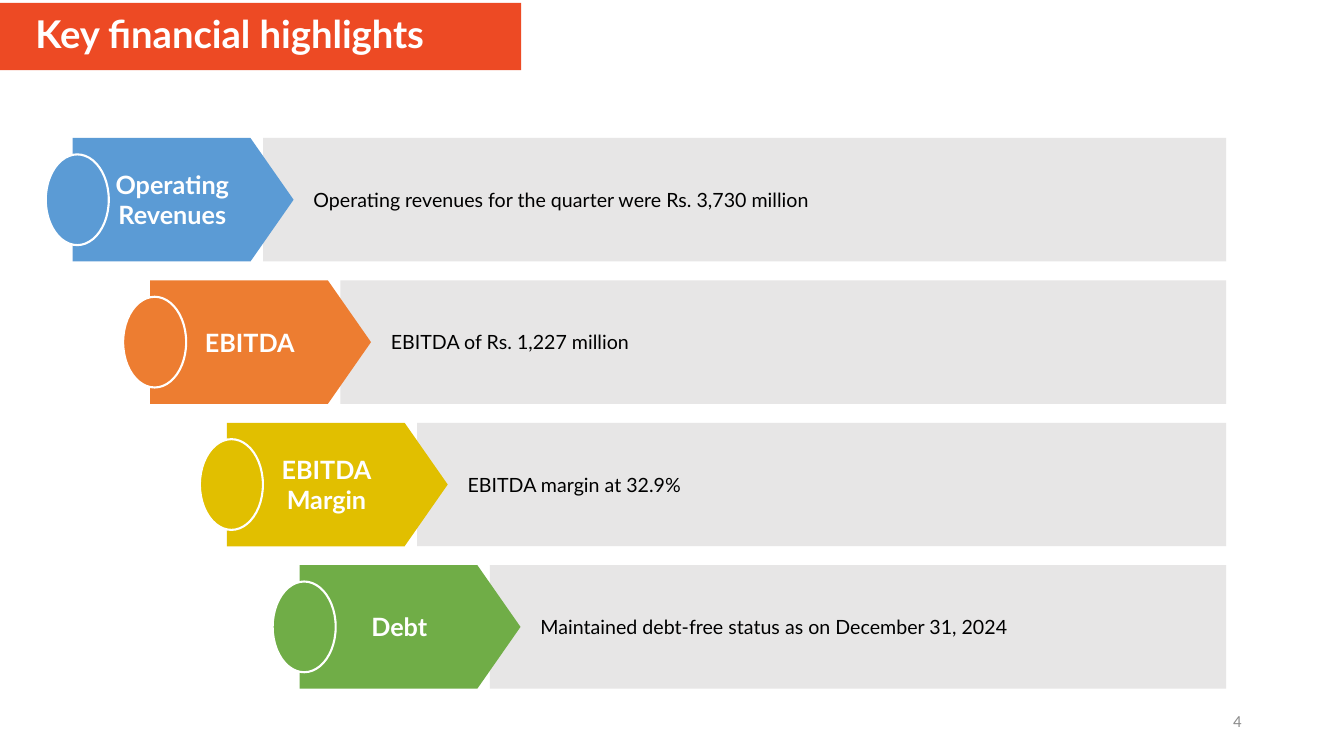
"""Build the key financial highlights slide with four stepped arrow rows."""
from pptx import Presentation
from pptx.dml.color import RGBColor
from pptx.enum.shapes import MSO_SHAPE
from pptx.enum.text import MSO_ANCHOR, MSO_AUTO_SIZE, PP_ALIGN
from pptx.util import Pt

TITLE = "Key financial highlights"
PAGE_NUMBER = "4"
ROWS = [
    ("Operating Revenues", "Operating revenues for the quarter were Rs. 3,730 million", "blue", 51.9),
    ("EBITDA", "EBITDA of Rs. 1,227 million", "orange", 107.2),
    ("EBITDA\vMargin", "EBITDA margin at 32.9%", "yellow", 162),
    ("Debt", "Maintained debt-free status as on December 31, 2024", "green", 214),
]
COLORS = {
    "title": "ED4A24", "bar": "E7E6E6", "blue": "5B9BD5", "orange": "ED7D31",
    "yellow": "E1BF00", "green": "70AD47", "white": "FFFFFF", "black": "000000",
    "number": "8C8C8C",
}
FIRST_TOP, ROW_STEP, ROW_HEIGHT = 98.6, 101.7, 88.2
ARROW_WIDTH, BAR_OFFSET, BAR_RIGHT = 157.8, 136, 875.8
CIRCLE_WIDTH, CIRCLE_HEIGHT, CIRCLE_OVERHANG = 45, 64.8, 19.2


def color(name):
    return RGBColor.from_string(COLORS[name])


def write(box, text, size, ink, align=PP_ALIGN.LEFT, bold=False, font="Lato"):
    frame = box.text_frame
    frame.text = text
    frame.word_wrap = True
    frame.auto_size = MSO_AUTO_SIZE.NONE
    frame.vertical_anchor = MSO_ANCHOR.MIDDLE
    for para in frame.paragraphs:
        para.alignment = align
        for span in para.runs:
            span.font.name = font
            span.font.size = Pt(size)
            span.font.bold = bold
            span.font.color.rgb = color(ink)
    return frame


def add_block(page, kind, left, top, width, height, fill):
    block = page.shapes.add_shape(kind, Pt(left), Pt(top), Pt(width), Pt(height))
    block.shadow.inherit = False
    block.fill.solid()
    block.fill.fore_color.rgb = color(fill)
    block.line.fill.background()
    return block


def add_title(page):
    title = page.shapes.title
    title.left, title.top, title.width, title.height = Pt(0), Pt(2), Pt(372.2), Pt(48.2)
    title.fill.solid()
    title.fill.fore_color.rgb = color("title")
    frame = write(title, TITLE, 27.3, "white", bold=True)
    frame.margin_left = Pt(25.2)
    frame.paragraphs[0].line_spacing = 0.9


def add_row(page, top, label, detail, fill, left):
    bar_left = left + BAR_OFFSET
    bar = add_block(page, MSO_SHAPE.RECTANGLE, bar_left, top, BAR_RIGHT - bar_left, ROW_HEIGHT, "bar")
    arrow = add_block(page, MSO_SHAPE.PENTAGON, left, top, ARROW_WIDTH, ROW_HEIGHT, fill)
    arrow.adjustments[0] = 0.349
    circle_top = top + (ROW_HEIGHT - CIRCLE_HEIGHT) / 2
    circle = add_block(page, MSO_SHAPE.OVAL, left - CIRCLE_OVERHANG, circle_top,
                       CIRCLE_WIDTH, CIRCLE_HEIGHT, fill)
    circle.line.color.rgb = color("white")
    circle.line.width = Pt(1.5)
    detail_frame = write(bar, detail, 14, "black")
    label_frame = write(arrow, label, 18, "white", PP_ALIGN.CENTER, bold=True)
    detail_frame.margin_left = Pt(36)
    label_frame.margin_left = Pt(7.2)


def main():
    deck = Presentation()
    deck.slide_width, deck.slide_height = Pt(960), Pt(540)
    page = deck.slides.add_slide(deck.slide_layouts[5])
    add_title(page)
    for index, row in enumerate(ROWS):
        add_row(page, FIRST_TOP + index * ROW_STEP, *row)
    number = page.shapes.add_textbox(Pt(678), Pt(500.6), Pt(216), Pt(28.8))
    write(number, PAGE_NUMBER, 12, "number", PP_ALIGN.RIGHT, font="Calibri")
    deck.save("out.pptx")


if __name__ == "__main__":
    main()
